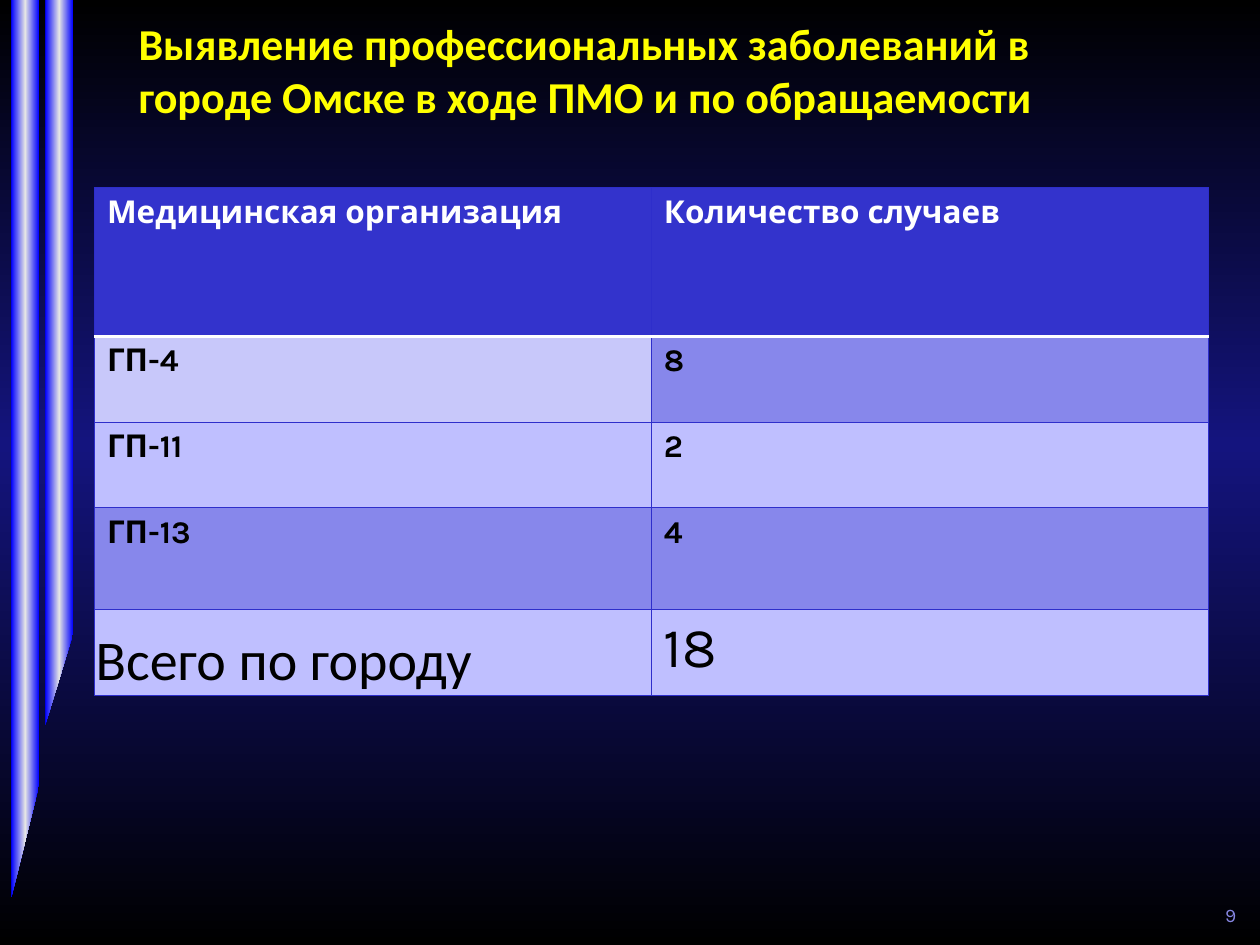
import pptx
import pptx.util
import pptx.oxml
import pptx.dml.color
import pptx.enum.text
from pptx.oxml import ns

Inches = pptx.util.Inches
Pt = pptx.util.Pt
RGB = pptx.dml.color.RGBColor.from_string
ANCHOR = pptx.enum.text.MSO_ANCHOR
ALIGN = pptx.enum.text.PP_ALIGN

TITLE = "Выявление профессиональных заболеваний в городе Омске в ходе ПМО и по обращаемости"
PAGE_NUMBER = "9"
ROWS = [
    ("Медицинская организация", "Количество случаев"),
    ("ГП-4", "8"),
    ("ГП-11", "2"),
    ("ГП-13", "4"),
    ("Всего по городу", "18"),
]
ROW_HEIGHTS = [1.18, 0.68, 0.68, 0.81, 0.68]
COLUMN_WIDTH = 4.42
RIBBONS = [(0.36, 5.03, 5.75), (0.09, 6.23, 7.12)]
RIBBON_WIDTH = 0.22

THEME = {
    "heading": "Calibri", "body": "Karla",
    "title_size": 25.2, "cell_size": 18, "total_size": 32, "number_size": 11,
    "title": "FFFF00", "number": "8585E0", "header_text": "FFFFFF", "text": "000000",
    "rule": "2E2ECB", "header_rule": "FFFFFF",
    "page": [(0, "000000"), (53, "14147E"), (100, "000000")],
    "ribbon": [(0, "0000FF"), (50, "E5E5E5"), (100, "0000FF")],
    "fills": [
        ("3333CC", "3333CC"), ("C8C8FA", "8787EB"), ("BFBFFF", "BFBFFF"),
        ("8787EB", "8787EB"), ("BFBFFF", "BFBFFF"),
    ],
}


def set_gradient(fill, element, stops, angle):
    fill.gradient()
    fill.gradient_angle = angle
    stop_list = element.xpath(".//a:gsLst")[0]
    for stop in list(stop_list):
        stop_list.remove(stop)
    for position, color in stops:
        stop_list.append(pptx.oxml.parse_xml(
            f'<a:gs {ns.nsdecls("a")} pos="{position * 1000}"><a:srgbClr val="{color}"/></a:gs>'))


def set_font(para, name, size, color, bold=False):
    para.font.name = name
    para.font.size = Pt(size)
    para.font.bold = bold
    para.font.color.rgb = RGB(color)


def set_margins(target, left, top, right, bottom):
    target.margin_left, target.margin_top = Inches(left), Inches(top)
    target.margin_right, target.margin_bottom = Inches(right), Inches(bottom)


def set_borders(cell, row):
    properties = cell._tc.get_or_add_tcPr()
    header_edge = {0: "B", 1: "T"}.get(row)
    for index, side in enumerate("LRTB"):
        color, width = (THEME["header_rule"], 2) if side == header_edge else (THEME["rule"], 0.75)
        properties.insert(index, pptx.oxml.parse_xml(
            f'<a:ln{side} {ns.nsdecls("a")} w="{Pt(width)}"><a:solidFill>'
            f'<a:srgbClr val="{color}"/></a:solidFill></a:ln{side}>'))


def add_text(page, text, left, top, width, height):
    box = page.shapes.add_textbox(Inches(left), Inches(top), Inches(width), Inches(height))
    box.text_frame.word_wrap = True
    box.text_frame.text = text
    return box.text_frame


def add_ribbon(page, left, right_end, left_end):
    right = left + RIBBON_WIDTH
    builder = page.shapes.build_freeform(Inches(left), 0)
    corners = [(right, 0), (right, right_end), (left, left_end)]
    builder.add_line_segments([(Inches(x), Inches(y)) for x, y in corners], close=True)
    ribbon = builder.convert_to_shape()
    ribbon.shadow.inherit = False
    ribbon.line.fill.background()
    set_gradient(ribbon.fill, ribbon._element, THEME["ribbon"], 0)


def add_cases_table(page):
    columns = len(ROWS[0])
    table = page.shapes.add_table(
        len(ROWS), columns, Inches(0.75), Inches(1.49),
        Inches(COLUMN_WIDTH * columns), Inches(sum(ROW_HEIGHTS))).table
    for column in table.columns:
        column.width = Inches(COLUMN_WIDTH)
    for row, values in enumerate(ROWS):
        table.rows[row].height = Inches(ROW_HEIGHTS[row])
        is_total = row == len(ROWS) - 1
        size = THEME["total_size"] if is_total else THEME["cell_size"]
        color = THEME["text"] if row else THEME["header_text"]
        for column, value in enumerate(values):
            cell = table.cell(row, column)
            cell.text = value
            cell.fill.solid()
            cell.fill.fore_color.rgb = RGB(THEME["fills"][row][column])
            set_borders(cell, row)
            is_label = is_total and column == 0
            name = THEME["heading"] if is_label else THEME["body"]
            set_font(cell.text_frame.paragraphs[0], name, size, color, not is_total)
            if is_label:
                cell.vertical_anchor = ANCHOR.BOTTOM
                set_margins(cell, 0.01, 0.01, 0.01, 0)


def main():
    deck = pptx.Presentation()
    deck.slide_width, deck.slide_height = Inches(10), Inches(7.5)
    page = deck.slides.add_slide(deck.slide_layouts[6])
    set_gradient(page.background.fill, page._element, THEME["page"], 90)
    for ribbon in RIBBONS:
        add_ribbon(page, *ribbon)

    title = add_text(page, TITLE, 1.1, 0.13, 7.56, 0.86)
    set_margins(title, 0, 0, 0, 0)
    set_font(title.paragraphs[0], THEME["heading"], THEME["title_size"], THEME["title"], True)

    number = add_text(page, PAGE_NUMBER, 6.91, 7, 3, 0.4)
    number.vertical_anchor = ANCHOR.BOTTOM
    number.paragraphs[0].alignment = ALIGN.RIGHT
    set_font(number.paragraphs[0], THEME["body"], THEME["number_size"], THEME["number"])

    add_cases_table(page)
    deck.save("out.pptx")


if __name__ == "__main__":
    main()
